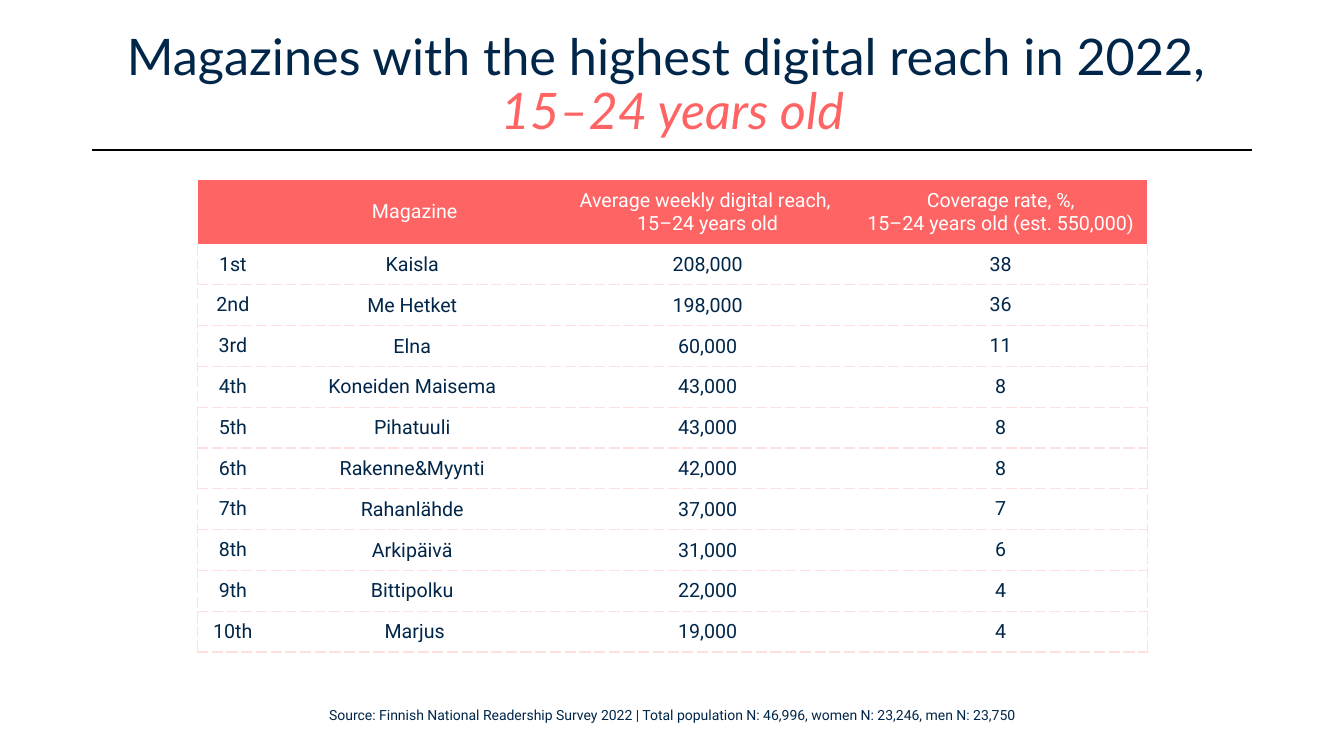
from lxml import etree
from pptx import Presentation
from pptx.dml.color import RGBColor
from pptx.enum.shapes import MSO_CONNECTOR
from pptx.enum.text import MSO_ANCHOR, MSO_AUTO_SIZE, PP_ALIGN
from pptx.oxml.ns import qn
from pptx.util import Inches, Pt

CENTER = PP_ALIGN.CENTER
MIDDLE = MSO_ANCHOR.MIDDLE
STRAIGHT = MSO_CONNECTOR.STRAIGHT

# Content
TITLE = "Magazines with the highest digital reach in 2022, "
SUBTITLE = "15–24 years old"
HEADER = ("", "Magazine", "Average weekly digital reach, \v15–24 years old",
          "Coverage rate, %,\v15–24 years old (est. 550,000)")
ROWS = [
    ("1st", "Kaisla ", "208,000", "38"),
    ("2nd", "Me Hetket ", "198,000", "36"),
    ("3rd", "Elna ", "60,000", "11"),
    ("4th", "Koneiden Maisema ", "43,000", "8"),
    ("5th", "Pihatuuli ", "43,000", "8"),
    ("6th", "Rakenne&Myynti ", "42,000", "8"),
    ("7th", "Rahanlähde ", "37,000", "7"),
    ("8th", "Arkipäivä ", "31,000", "6"),
    ("9th", "Bittipolku ", "22,000", "4"),
    ("10th", "Marjus", "19,000", "4"),
]
SOURCE = ("Source: Finnish National Readership Survey 2022 | "
          "Total population N: 46,996, women N: 23,246, men N: 23,750")


class Theme:
    navy = RGBColor.from_string("002649")
    coral = RGBColor.from_string("FF6464")
    white = RGBColor.from_string("FFFFFF")
    black = RGBColor.from_string("000000")
    border = "FFE0E0"
    title_font, body_font = "Lato", "Roboto"
    title_size, table_size, source_size = Pt(36), Pt(14), Pt(10)


def style(p, name, size, color):
    p.alignment = CENTER
    p.font.name, p.font.size = name, size
    p.font.color.rgb = color


def set_borders(cell, dashed):
    """Dash the named sides (L, R, T, B) and clear the others."""
    tcPr = cell._tc.get_or_add_tcPr()
    for i, side in enumerate("LRTB"):
        ln = etree.Element(qn(f"a:ln{side}"), w=str(Pt(1)))
        if side in dashed:
            fill = etree.SubElement(ln, qn("a:solidFill"))
            etree.SubElement(fill, qn("a:srgbClr"), val=Theme.border)
            etree.SubElement(ln, qn("a:prstDash"), val="sysDash")
        else:
            etree.SubElement(ln, qn("a:noFill"))
        tcPr.insert(i, ln)


prs = Presentation()
prs.slide_width, prs.slide_height = Inches(13.33), Inches(7.5)
s = prs.slides.add_slide(prs.slide_layouts[5])

# Title
sp = s.shapes.title
sp.left, sp.top, sp.width, sp.height = map(Inches, (0.92, 0.32, 11.5, 1.07))
tf = sp.text_frame
tf.word_wrap, tf.auto_size = True, MSO_AUTO_SIZE.NONE
tf.vertical_anchor = MIDDLE
p = tf.paragraphs[0]
style(p, Theme.title_font, Theme.title_size, Theme.navy)
p.line_spacing = 0.9
p.add_run().text = TITLE
p.add_line_break()
r = p.add_run()
r.text = SUBTITLE
r.font.italic = True
r.font.color.rgb = Theme.coral

# Rule under the title
rule = s.shapes.add_connector(STRAIGHT, Inches(0.91), Inches(1.49),
                              Inches(12.42), Inches(1.49))
rule.line.color.rgb, rule.line.width = Theme.black, Pt(1)
etree.SubElement(rule._element.spPr, qn("a:effectLst"))

# Ranking table
WIDTH, HEIGHT, RANK_W, HEADER_H = 9.42, 4.68, 0.7, 0.63
frame = s.shapes.add_table(len(ROWS) + 1, len(HEADER), Inches(1.96),
                           Inches(1.79), Inches(WIDTH), Inches(HEIGHT))
table = frame.table
table.first_row = table.horz_banding = False
last = len(HEADER) - 1
for i, col in enumerate(table.columns):
    col.width = Inches((WIDTH - RANK_W) / last if i else RANK_W)
for i, row in enumerate(table.rows):
    row.height = Inches((HEIGHT - HEADER_H) / len(ROWS) if i else HEADER_H)

for i, texts in enumerate([HEADER, *ROWS]):
    for j, text in enumerate(texts):
        cell = table.cell(i, j)
        cell.vertical_anchor = MIDDLE
        p = cell.text_frame.paragraphs[0]
        p.text = text
        style(p, Theme.body_font, Theme.table_size,
              Theme.navy if i else Theme.white)
        if i == 0:
            cell.fill.solid()
            cell.fill.fore_color.rgb = Theme.coral
            set_borders(cell, "")
            continue
        cell.fill.background()
        sides = "B" if i == 1 else "TB"
        set_borders(cell, sides + {0: "L", last: "R"}.get(j, ""))
        if 0 < j < last:
            cell.margin_left = cell.margin_right = Inches(0.01)
            cell.margin_top, cell.margin_bottom = Inches(0.01), 0

# Source line
sp = s.shapes.add_textbox(Inches(3.04), Inches(6.96), Inches(7.25), Inches(0.27))
tf = sp.text_frame
tf.word_wrap, tf.auto_size = False, MSO_AUTO_SIZE.SHAPE_TO_FIT_TEXT
p = tf.paragraphs[0]
p.text = SOURCE
style(p, Theme.body_font, Theme.source_size, Theme.navy)

prs.save("out.pptx")
